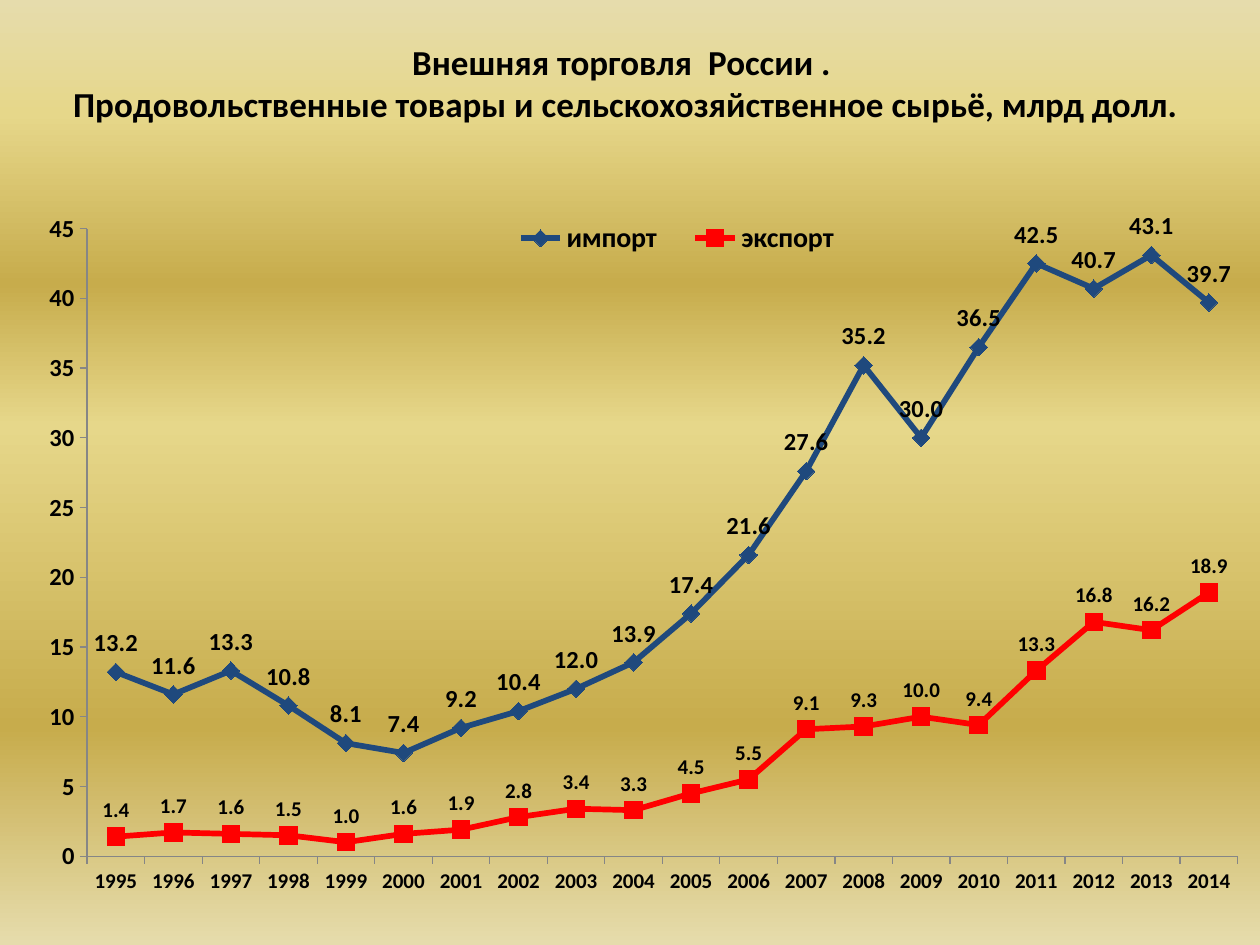
from dataclasses import dataclass

from lxml import etree
from pptx import Presentation
from pptx.chart.data import CategoryChartData
from pptx.dml.color import RGBColor
from pptx.enum.chart import (XL_CHART_TYPE, XL_LABEL_POSITION, XL_LEGEND_POSITION,
                             XL_MARKER_STYLE, XL_TICK_MARK)
from pptx.enum.shapes import MSO_SHAPE
from pptx.enum.text import MSO_ANCHOR, PP_ALIGN
from pptx.oxml.ns import qn
from pptx.util import Inches, Pt

LINE_MARKERS = XL_CHART_TYPE.LINE_MARKERS
ABOVE = XL_LABEL_POSITION.ABOVE
LEGEND_TOP = XL_LEGEND_POSITION.TOP
DIAMOND, SQUARE = XL_MARKER_STYLE.DIAMOND, XL_MARKER_STYLE.SQUARE
OUTSIDE = XL_TICK_MARK.OUTSIDE
ROUNDED = MSO_SHAPE.ROUNDED_RECTANGLE
MIDDLE = MSO_ANCHOR.MIDDLE
CENTER = PP_ALIGN.CENTER


@dataclass(frozen=True)
class Theme:
    font: str = "Calibri"
    text: RGBColor = RGBColor(0, 0, 0)
    axis: RGBColor = RGBColor(0x86, 0x86, 0x86)
    imports: RGBColor = RGBColor(0x1F, 0x49, 0x7D)
    exports: RGBColor = RGBColor(0xFF, 0, 0)
    background: tuple = ((0, "E6DCAC"), (12, "E6D78A"), (30, "C7AC4C"),
                         (45, "E6D78A"), (77, "C7AC4C"), (100, "E6DCAC"))
    title: Pt = Pt(20)
    legend: Pt = Pt(16)
    large: Pt = Pt(14)
    small: Pt = Pt(12)
    line: Pt = Pt(3.25)
    marker: int = 10


THEME = Theme()


def set_font(font, size):
    font.name = THEME.font
    font.size = size
    font.bold = True
    font.color.rgb = THEME.text


def set_layout(parent, index, inner, **box):
    for old in parent.findall(qn("c:layout")):
        parent.remove(old)
    layout = etree.Element(qn("c:layout"))
    manual = etree.SubElement(layout, qn("c:manualLayout"))
    if inner:
        etree.SubElement(manual, qn("c:layoutTarget"), val="inner")
    for mode in ("xMode", "yMode"):
        etree.SubElement(manual, qn(f"c:{mode}"), val="edge")
    for side, share in box.items():
        etree.SubElement(manual, qn(f"c:{side}"), val=str(share))
    parent.insert(index, layout)


prs = Presentation()
prs.slide_width, prs.slide_height = Inches(10), Inches(7.5)
slide = prs.slides.add_slide(prs.slide_layouts[6])

background = slide.background.fill
background.gradient()
background.gradient_angle = 270
stops = slide.background._cSld.find(".//" + qn("a:gsLst"))
for old_stop in list(stops):
    stops.remove(old_stop)
for percent, color in THEME.background:
    stop = etree.SubElement(stops, qn("a:gs"), pos=str(percent * 1000))
    etree.SubElement(stop, qn("a:srgbClr"), val=color)

title = slide.shapes.add_shape(ROUNDED, Inches(0.16), Inches(0.13), Inches(9.61), Inches(1.05))
title.shadow.inherit = False
title.fill.background()
title.line.fill.background()
title.text_frame.word_wrap = True
title.text_frame.vertical_anchor = MIDDLE
title.text_frame.text = ("Внешняя торговля  России . \n"
                         "Продовольственные товары и сельскохозяйственное сырьё, млрд долл.")
for paragraph in title.text_frame.paragraphs:
    paragraph.alignment = CENTER
    set_font(paragraph.font, THEME.title)

trade = CategoryChartData(number_format="0.0")
trade.categories = [str(year) for year in range(1995, 2015)]
trade.add_series("импорт", (13.2, 11.6, 13.3, 10.8, 8.1, 7.4, 9.2, 10.4, 12.0, 13.9,
                            17.4, 21.6, 27.6, 35.2, 30.0, 36.5, 42.5, 40.7, 43.1, 39.7))
trade.add_series("экспорт", (1.4, 1.7, 1.6, 1.5, 1.0, 1.6, 1.9, 2.8, 3.4, 3.3,
                             4.5, 5.5, 9.1, 9.3, 10.0, 9.4, 13.3, 16.8, 16.2, 18.9))
chart = slide.shapes.add_chart(LINE_MARKERS, Inches(0.16), Inches(1.33),
                               Inches(9.84), Inches(5.91), trade).chart
chart.has_title = False
set_font(chart.font, THEME.small)
chart.plots[0].vary_by_categories = False
set_layout(chart._chartSpace.chart.plotArea, 0, True, x=0.054, y=0.082, w=0.928, h=0.843)

chart.has_legend = True
chart.legend.position = LEGEND_TOP
chart.legend.include_in_layout = False
set_font(chart.legend.font, THEME.legend)
set_layout(chart.legend._element, 1, False, x=0.38, y=0.06, w=0.3, h=0.07)

for axis, size in ((chart.category_axis, THEME.small), (chart.value_axis, THEME.large)):
    axis.has_major_gridlines = False
    axis.major_tick_mark = OUTSIDE
    axis.format.line.color.rgb = THEME.axis
    set_font(axis.tick_labels.font, size)
chart.value_axis.minimum_scale = 0
chart.value_axis.maximum_scale = 45
chart.value_axis.major_unit = 5
chart.value_axis.tick_labels.number_format = "0"
chart.value_axis.tick_labels.number_format_is_linked = False

series_styles = ((THEME.imports, DIAMOND, THEME.large), (THEME.exports, SQUARE, THEME.small))
for series, (color, symbol, label_size) in zip(chart.plots[0].series, series_styles):
    series.smooth = False
    series.format.line.color.rgb = color
    series.format.line.width = THEME.line
    series.marker.style = symbol
    series.marker.size = THEME.marker
    series.marker.format.fill.solid()
    series.marker.format.fill.fore_color.rgb = color
    series.marker.format.line.color.rgb = color
    labels = series.data_labels
    labels.show_value = True
    labels.position = ABOVE
    labels.number_format = "0.0"
    labels.number_format_is_linked = False
    set_font(labels.font, label_size)

prs.save("out.pptx")
